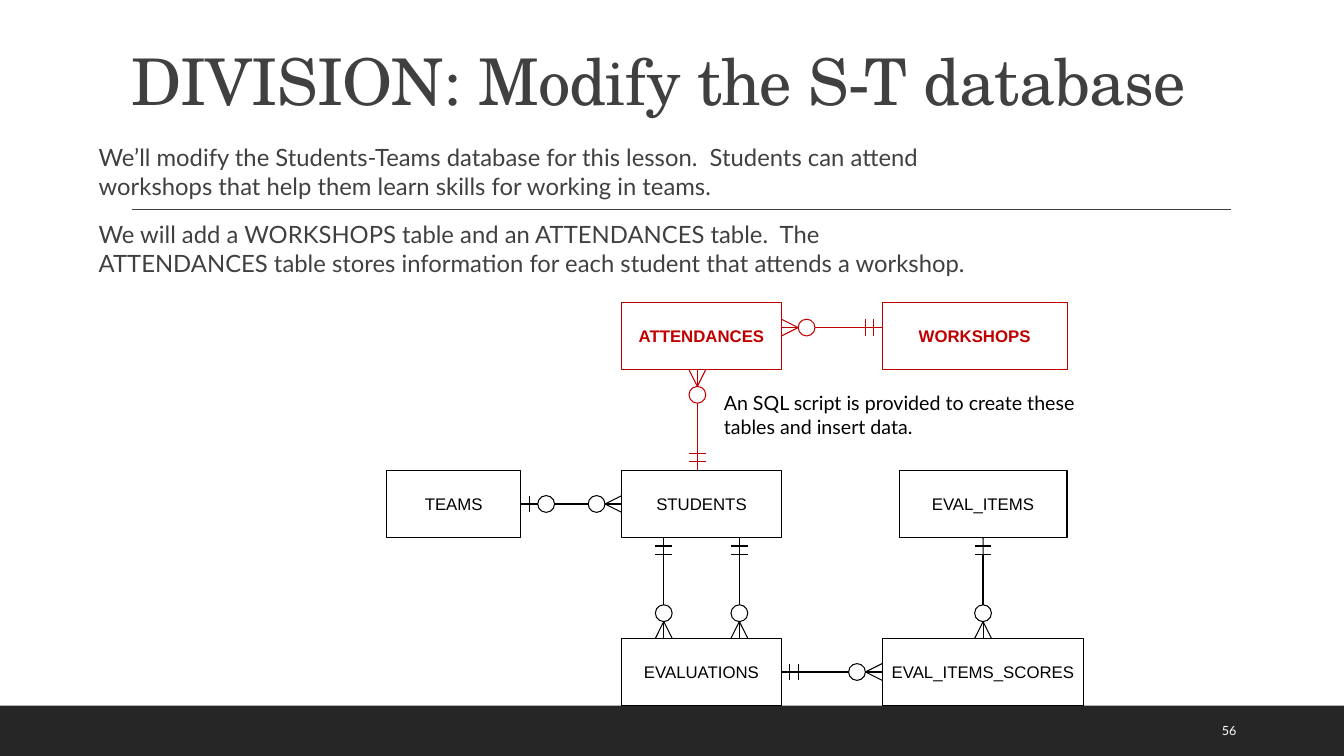
from lxml import etree
from pptx import Presentation
from pptx.dml.color import RGBColor
from pptx.enum import shapes, text
from pptx.oxml.ns import qn
from pptx.util import Inches, Pt

BLACK = RGBColor(0x00, 0x00, 0x00)
WHITE = RGBColor(0xFF, 0xFF, 0xFF)
GREY = RGBColor(0x40, 0x40, 0x40)
DARK = RGBColor(0x26, 0x26, 0x26)
RED = RGBColor(0xC0, 0x00, 0x00)
GRID = 12

deck = Presentation()
deck.slide_width, deck.slide_height = Inches(13.33), Inches(7.5)
slide = deck.slides.add_slide(deck.slide_layouts[5])


def add_line(start, end, color, width=0.75):
    line = slide.shapes.add_connector(
        shapes.MSO_CONNECTOR.STRAIGHT, *[Inches(v) for v in (*start, *end)])
    line.line.color.rgb = color
    line.line.width = Pt(width)
    etree.SubElement(line._element.spPr, qn("a:effectLst"))
    return line


def add_text(left, top, width, height, paragraphs, size, color):
    box = slide.shapes.add_textbox(*[Inches(v) for v in (left, top, width, height)])
    frame = box.text_frame
    frame.word_wrap = True
    frame.text = "\n".join(paragraphs)
    for paragraph in frame.paragraphs:
        paragraph.font.name = "Lato"
        paragraph.font.size = Pt(size)
        paragraph.font.color.rgb = color
    return frame


footer = slide.shapes.add_shape(
    shapes.MSO_SHAPE.RECTANGLE, 0, Inches(7), deck.slide_width, Inches(0.5))
footer.shadow.inherit = False
footer.fill.solid()
footer.fill.fore_color.rgb = DARK
footer.line.fill.background()
add_line((1.31, 2.08), (12.21, 2.08), GREY, 1)

title = slide.shapes.title
title.left, title.top = Inches(1.2), Inches(0.31)
title.width, title.height = Inches(11), Inches(0.93)
title.text_frame.text = "DIVISION: Modify the S-T database"
title.text_frame.auto_size = text.MSO_AUTO_SIZE.NONE
title.text_frame.vertical_anchor = text.MSO_ANCHOR.BOTTOM
heading = title.text_frame.paragraphs[0]
heading.alignment = text.PP_ALIGN.LEFT
heading.line_spacing = 0.9
heading.font.name = "TeX Gyre Schola"
heading.font.size = Pt(46)
heading.font.color.rgb = GREY
heading.runs[0].font._element.set("spc", "-50")

lesson = add_text(0.88, 1.37, 8.75, 1.67, [
    "We’ll modify the Students-Teams database for this lesson.  Students can attend "
    "workshops that help them learn skills for working in teams.",
    "We will add a WORKSHOPS table and an ATTENDANCES table.  The ATTENDANCES table "
    "stores information for each student that attends a workshop.",
], 17, GREY)
lesson.margin_left, lesson.margin_right = Inches(0.1), 0
for paragraph in lesson.paragraphs:
    paragraph.space_before = Pt(12)
    paragraph.space_after = Pt(2)

page = add_text(12.02, 7.05, 0.85, 0.4, ["56"], 9, WHITE)
page.vertical_anchor = text.MSO_ANCHOR.MIDDLE

entities = {}
for name, column, row, width, color in [
    ("TEAMS", 46, 56, 16, BLACK),
    ("STUDENTS", 74, 56, 19, BLACK),
    ("EVALUATIONS", 74, 76, 19, BLACK),
    ("EVAL_ITEMS_SCORES", 105, 76, 24, BLACK),
    ("EVAL_ITEMS", 107, 56, 20, BLACK),
    ("ATTENDANCES", 74, 36, 19, RED),
    ("WORKSHOPS", 105, 36, 22, RED),
]:
    entity = slide.shapes.add_shape(
        shapes.MSO_SHAPE.RECTANGLE, *[Inches(v / GRID) for v in (column, row, width, 8)])
    entity.shadow.inherit = False
    entity.fill.background()
    entity.line.color.rgb = color
    entity.line.width = Pt(0.75)
    entity.text_frame.word_wrap = False
    entity.text_frame.vertical_anchor = text.MSO_ANCHOR.MIDDLE
    entity.text_frame.text = name
    label = entity.text_frame.paragraphs[0]
    label.alignment = text.PP_ALIGN.CENTER
    label.font.name = "Arial"
    label.font.size = Pt(12)
    label.font.bold = color == RED
    label.font.color.rgb = color
    entities[name] = entity

for column, row, dx, dy, color, optional, one, many in [
    (62, 60, 1, 0, BLACK, True, ("TEAMS", 3), ("STUDENTS", 1)),
    (79, 64, 0, 1, BLACK, False, None, None),
    (88, 64, 0, 1, BLACK, False, None, None),
    (117, 64, 0, 1, BLACK, False, ("EVAL_ITEMS", 2), ("EVAL_ITEMS_SCORES", 0)),
    (93, 80, 1, 0, BLACK, False, ("EVALUATIONS", 3), ("EVAL_ITEMS_SCORES", 1)),
    (83, 56, 0, -1, RED, False, None, None),
    (105, 39, -1, 0, RED, False, None, None),
]:
    def at(along, across=0):
        return ((column + dx * along - dy * across) / GRID,
                (row + dy * along + dx * across) / GRID)

    add_line(at(4 if optional else 2), at(8), color, 1)
    one_end = add_line(at(0), at(2), color)
    many_end = add_line(at(10), at(12), color)
    if one:
        one_end.begin_connect(entities[one[0]], one[1])
        many_end.end_connect(entities[many[0]], many[1])
    for side in (-1, 1):
        add_line(at(10), at(12, side), color)
    for tick in [1] if optional else [1, 2]:
        add_line(at(tick, -1), at(tick, 1), color)
    for center in [3, 9] if optional else [9]:
        x, y = at(center)
        circle = slide.shapes.add_shape(
            shapes.MSO_SHAPE.OVAL, Inches(x - 1 / GRID), Inches(y - 1 / GRID),
            Inches(2 / GRID), Inches(2 / GRID))
        circle.shadow.inherit = False
        circle.fill.background()
        circle.line.color.rgb = color
        circle.line.width = Pt(0.75)

add_text(7.08, 3.83, 3.75, 0.57, [
    "An SQL script is provided to create these tables and insert data."], 14, BLACK)

deck.save("out.pptx")
